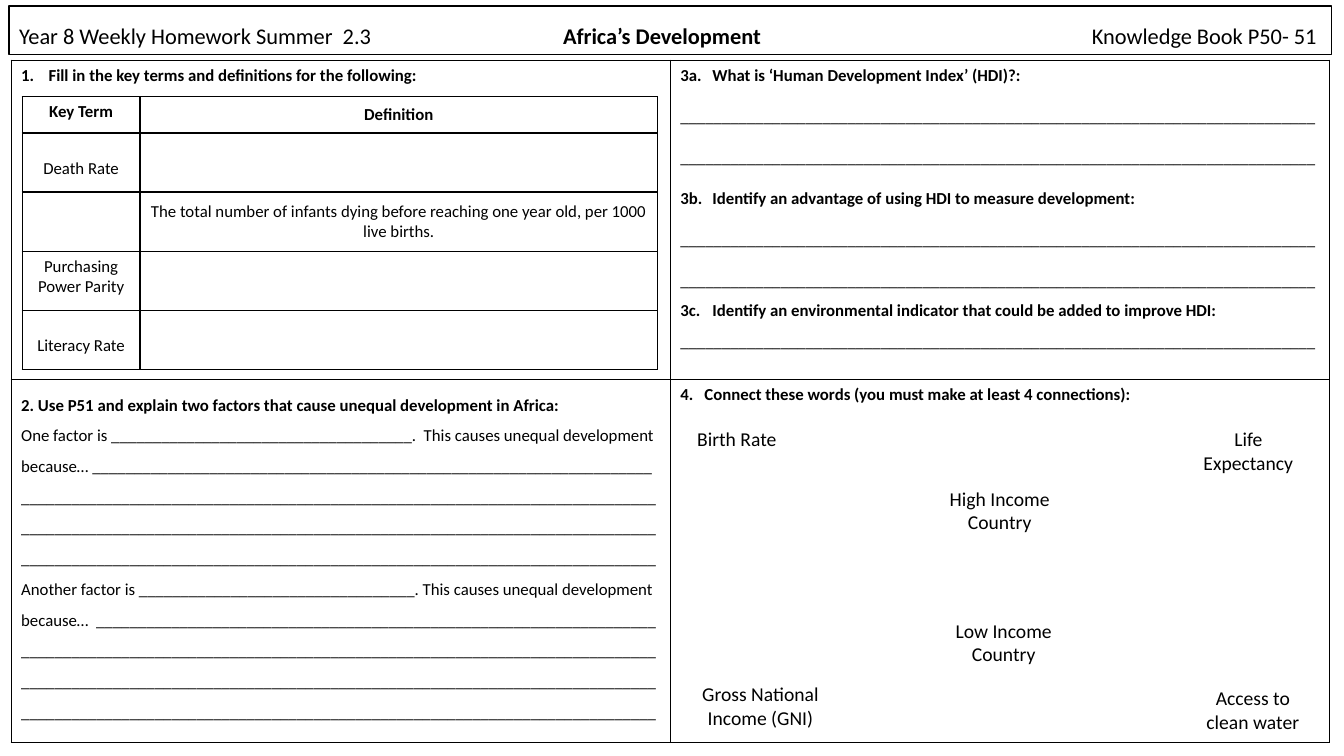
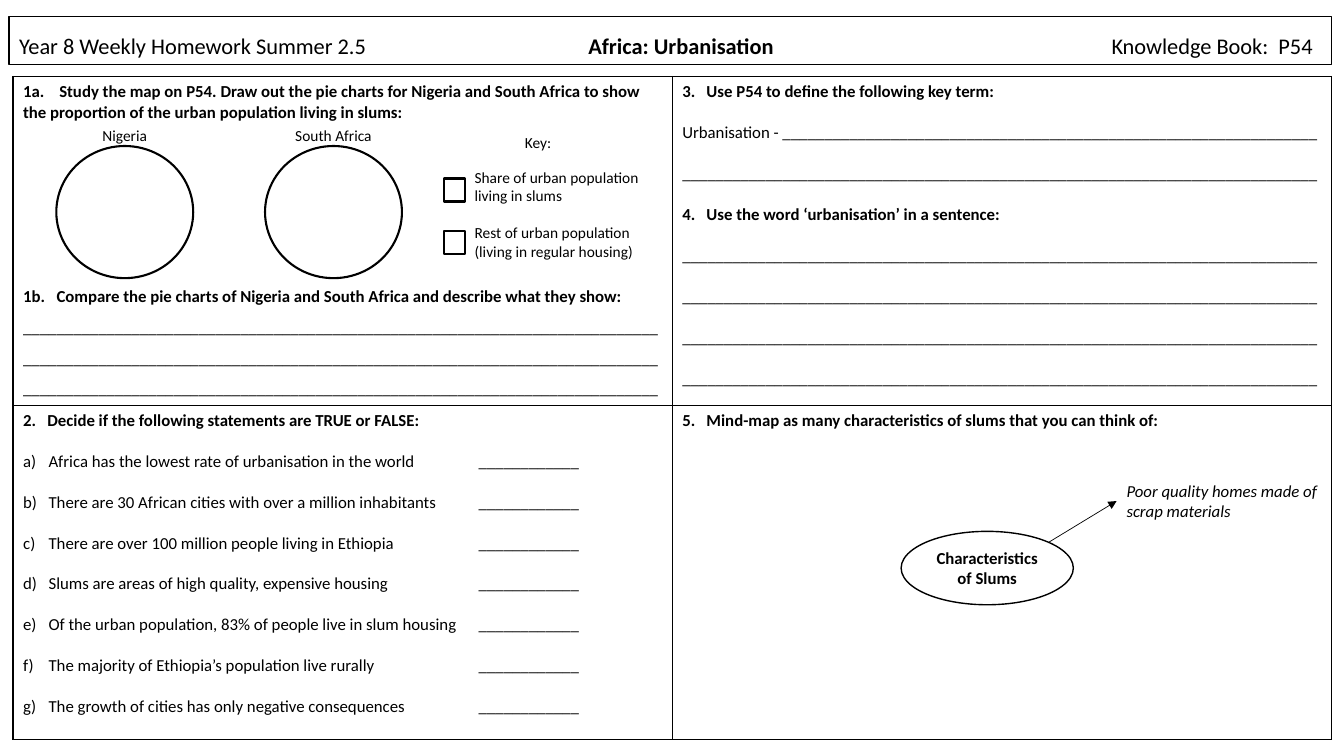
from dataclasses import dataclass

from lxml import etree
from pptx import Presentation
from pptx import util as u
from pptx.dml.color import RGBColor
from pptx.enum import shapes, text
from pptx.oxml.ns import qn

Cm, Pt = u.Cm, u.Pt
CENTER, LEFT = text.PP_ALIGN.CENTER, text.PP_ALIGN.LEFT
TOP, MIDDLE, BOTTOM = (text.MSO_ANCHOR.TOP, text.MSO_ANCHOR.MIDDLE,
                       text.MSO_ANCHOR.BOTTOM)


@dataclass(frozen=True)
class Theme:
    font: str = "Calibri"
    ink: RGBColor = RGBColor(0, 0, 0)
    paper: RGBColor = RGBColor(255, 255, 255)
    title: int = 16
    word: int = 14
    body: int = 12
    label: int = 11
    line_height: float = 14.65  # one body line, in points
    rule_chars: int = 76        # underscores that fill a panel


@dataclass
class Para:
    """Runs are (text, style) pairs; style is "", "b" or "i"."""
    runs: list
    spacing: float = 1
    before: float = 0           # in body lines
    tabs: tuple = ()            # (alignment, position in cm)
    align: int = LEFT
    lettered: bool = False


THEME = Theme()


# Kinds of worksheet paragraph
def plain(words, style="", **options):
    return Para([(words, style)], **options)


def question(number, words, stop=None, **options):
    stop = stop or (0.61 if len(number) == 2 else 0.81)
    return plain(f"{number}\t{words}", "b", tabs=(("l", stop),), **options)


def rules(count, spacing):
    return plain("_" * THEME.rule_chars * count, spacing=spacing)


def statement(words):
    return plain(f"{words}\t{'_' * 12}", spacing=2, tabs=(("l", 11.48),),
                 lettered=True)


class Worksheet:
    def __init__(self, theme):
        self.theme = theme
        self.deck = Presentation()
        self.deck.slide_width, self.deck.slide_height = Cm(33.87), Cm(19.05)
        self.slide = None

    def add_text(self, frame, paras, size):
        for index, para in enumerate(paras):
            p = frame.paragraphs[0] if index == 0 else frame.add_paragraph()
            p.alignment, p.line_spacing = para.align, para.spacing
            if para.before:
                p.space_before = Pt(para.before * self.theme.line_height)
            props = p._p.get_or_add_pPr()
            if para.lettered:
                props.set("marL", str(Cm(0.64)))
                props.set("indent", str(-Cm(0.64)))
                etree.SubElement(props, qn("a:buAutoNum"), type="alphaLcParenR")
            if para.tabs:
                stops = etree.SubElement(props, qn("a:tabLst"))
                for kind, place in para.tabs:
                    etree.SubElement(stops, qn("a:tab"), pos=str(Cm(place)), algn=kind)
            for words, style in para.runs:
                run = p.add_run()
                run.text = words
                font = run.font
                font.name, font.size = self.theme.font, Pt(size)
                font.color.rgb = self.theme.ink
                font.bold, font.italic = style == "b", style == "i"

    def outline(self, shape, weight, filled=True):
        if filled:
            shape.fill.solid()
            shape.fill.fore_color.rgb = self.theme.paper
        else:
            shape.fill.background()
        shape.line.color.rgb = self.theme.ink
        shape.line.width = Pt(weight)
        shape.shadow.inherit = False

    def page(self, top, homework, topic, pages, center, right):
        """Start a slide with its header band."""
        self.slide = self.deck.slides.add_slide(self.deck.slide_layouts[5])
        band = self.slide.shapes.title
        band.left, band.top, band.width, band.height = map(Cm, (0.23, top, 33.32, 1.22))
        self.outline(band, 1)
        frame = band.text_frame
        frame.word_wrap, frame.auto_size = True, text.MSO_AUTO_SIZE.NONE
        frame.vertical_anchor = BOTTOM
        runs = [(f"{homework}\t", ""), (f"{topic}\t", "b"), (pages, "")]
        self.add_text(frame, [Para(runs, spacing=0.9, tabs=(("ctr", center), ("r", right)))],
                      self.theme.title)

    def table(self, left, top, cols, rows, filled=False):
        graphic = self.slide.shapes.add_table(len(rows), len(cols), Cm(left), Cm(top),
                                              Cm(sum(cols)), Cm(sum(rows)))
        table = graphic.table
        table.first_row = table.horz_banding = False
        for column, width in zip(table.columns, cols):
            column.width = Cm(width)
        for row, height in zip(table.rows, rows):
            row.height = Cm(height)
        for cell in table.iter_cells():
            props = cell._tc.get_or_add_tcPr()
            for side in ("lnL", "lnR", "lnT", "lnB"):
                border = etree.SubElement(props, qn(f"a:{side}"), w=str(Pt(1)))
                color = etree.SubElement(border, qn("a:solidFill"))
                etree.SubElement(color, qn("a:srgbClr"), val=str(self.theme.ink))
            if filled:
                cell.fill.solid()
                cell.fill.fore_color.rgb = self.theme.paper
            else:
                cell.fill.background()
        return table

    def panels(self, left, top, rows, contents):
        """Four question panels, filled row by row."""
        grid = self.table(left, top, (16.61, 16.61), rows)
        for cell, paras in zip(grid.iter_cells(), contents):
            self.add_text(cell.text_frame, paras, self.theme.body)

    def cell(self, cell, words, style="", anchor=MIDDLE, margin=0.13):
        cell.vertical_anchor, cell.margin_top = anchor, Cm(margin)
        self.add_text(cell.text_frame, [plain(words, style, align=CENTER)], self.theme.body)

    def label(self, words, left, top, width, height, size, align=CENTER, style=""):
        box = self.slide.shapes.add_textbox(*map(Cm, (left, top, width, height)))
        box.text_frame.word_wrap = True
        box.text_frame.auto_size = text.MSO_AUTO_SIZE.SHAPE_TO_FIT_TEXT
        self.add_text(box.text_frame, [plain(words, style, align=align)], size)
        return box

    def shape(self, kind, left, top, width, height, weight=1.5, filled=True, words=""):
        shape = self.slide.shapes.add_shape(kind, *map(Cm, (left, top, width, height)))
        self.outline(shape, weight, filled)
        if words:
            shape.text_frame.word_wrap = True
            shape.text_frame.vertical_anchor = MIDDLE
            self.add_text(shape.text_frame, [plain(words, "b", align=CENTER)],
                          self.theme.body)

    def arrow(self, start, target):
        """Arrow from a point to the middle of the target's left side."""
        x, y = map(Cm, start)
        arrow = self.slide.shapes.add_connector(shapes.MSO_CONNECTOR.STRAIGHT, x, y, x, y)
        arrow.end_connect(target, 1)
        arrow.line.color.rgb = self.theme.ink
        arrow.line.width = Pt(0.5)
        etree.SubElement(arrow.line._get_or_add_ln(), qn("a:tailEnd"), type="triangle")
        etree.SubElement(arrow._element.spPr, qn("a:effectLst"))


def development(sheet):
    sheet.page(0.15, "Year 8 Weekly Homework Summer  2.3", "Africa’s Development",
               "Knowledge Book P50- 51", 16.2, 32.7)
    because = "This causes unequal development because…"
    sheet.panels(0.28, 1.52, (8.05, 9.14), [
        [question("1.", "Fill in the key terms and definitions for the following:", 0.69)],
        [question("3a.", "What is ‘Human Development Index’ (HDI)?:"),
         rules(2, 2),
         question("3b.", "Identify an advantage of using HDI to measure development:",
                  before=1),
         rules(2, 2),
         question("3c.", "Identify an environmental indicator that could be added "
                  "to improve HDI:", spacing=1.5),
         rules(1, 1.5)],
        [plain("2. Use P51 and explain two factors that cause unequal development "
               "in Africa:", "b", spacing=1.5),
         plain(f"One factor is {'_' * 36}.  {because} {'_' * 67}", spacing=1.5),
         rules(3, 1.5),
         plain(f"Another factor is {'_' * 33}. {because}  {'_' * 67}", spacing=1.5),
         rules(3, 1.5)],
        [question("4.", "Connect these words (you must make at least 4 connections):")],
    ])

    # Words to connect
    for words, left, top, width, height in (
            ("Life Expectancy", 30.05, 10.64, 2.82, 1.45),
            ("Access to clean water", 30.05, 17.17, 3.05, 1.45),
            ("Birth Rate", 17.3, 10.64, 2.54, 0.86),
            ("Gross National Income (GNI)", 17.3, 17.07, 3.73, 1.45),
            ("Low Income Country", 23.77, 15.47, 3.05, 1.45),
            ("High Income Country", 23.57, 12.14, 3.25, 1.45)):
        sheet.label(words, left, top, width, height, sheet.theme.word)

    # Key terms and definitions
    terms = sheet.table(0.56, 2.44, (2.97, 13.04), (0.91,) + (1.49,) * 4, filled=True)
    sheet.cell(terms.cell(0, 0), "Key Term", "b", TOP)
    sheet.cell(terms.cell(0, 1), "Definition", "b")
    sheet.cell(terms.cell(2, 1), "The total number of infants dying before reaching "
               "one year old, per 1000 live births.")
    for row, term, margin in ((1, "Death Rate", 0.64), (3, "Purchasing Power Parity", 0.13),
                              (4, "Literacy Rate", 0.64)):
        sheet.cell(terms.cell(row, 0), term, anchor=TOP, margin=margin)


def urbanisation(sheet):
    sheet.page(0.41, "Year 8 Weekly Homework Summer 2.5", "Africa: Urbanisation",
               "Knowledge Book:  P54", 16.68, 32.6)
    statements = (
        "Africa has the lowest rate of urbanisation in the world",
        "There are 30 African cities with over a million inhabitants",
        "There are over 100 million people living in Ethiopia",
        "Slums are areas of high quality, expensive housing",
        "Of the urban population, 83% of people live in slum housing",
        "The majority of Ethiopia’s population live rurally",
        "The growth of cities has only negative consequences")
    sheet.panels(0.33, 1.93, (8.28, 8.43), [
        [question("1a.", "Study the map on P54. Draw out the pie charts for Nigeria and "
                  "South Africa to show the proportion of the urban population living "
                  "in slums:", 0.91),
         question("1b.", "Compare the pie charts of Nigeria and South Africa and "
                  "describe what they show:", 0.84, before=8),
         rules(3, 1.5)],
        [question("3.", "Use P54 to define the following key term:"),
         plain(f"Urbanisation - {'_' * 64}", spacing=2),
         rules(1, 2),
         question("4.", "Use the word ‘urbanisation’ in a sentence:", before=1),
         rules(4, 2)],
        [question("2.", "Decide if the following statements are TRUE or FALSE:"),
         *map(statement, statements)],
        [question("5.", "Mind-map as many characteristics of slums that you can think of:")],
    ])

    # Mind map
    oval, square = shapes.MSO_SHAPE.OVAL, shapes.MSO_SHAPE.RECTANGLE
    sheet.shape(oval, 22.71, 13.39, 4.34, 1.85, 1, False, "Characteristics of Slums")
    example = sheet.label("Poor quality homes made of scrap materials",
                          28.14, 11.99, 5.38, 1.27, sheet.theme.body, LEFT, "i")
    sheet.arrow((26.42, 13.67), example)

    # Blank pie charts
    small = sheet.theme.label
    for country, left in (("Nigeria", 1.42), ("South Africa", 6.68)):
        sheet.shape(oval, left, 3.68, 3.45, 3.33)
        sheet.label(country, left, 3.05, 3.45, 0.74, small)

    # Key
    sheet.label("Key:", 12.29, 3.23, 2.54, 0.74, small)
    for meaning, square_top, text_top in (
            ("Share of urban population living in slums", 4.5, 4.11),
            ("Rest of urban population (living in regular housing)", 5.82, 5.51)):
        sheet.shape(square, 11.18, square_top, 0.53, 0.58)
        sheet.label(meaning, 11.71, text_top, 4.83, 1.19, small, LEFT)


def main():
    sheet = Worksheet(THEME)
    development(sheet)
    urbanisation(sheet)
    sheet.deck.save("out.pptx")


if __name__ == "__main__":
    main()
